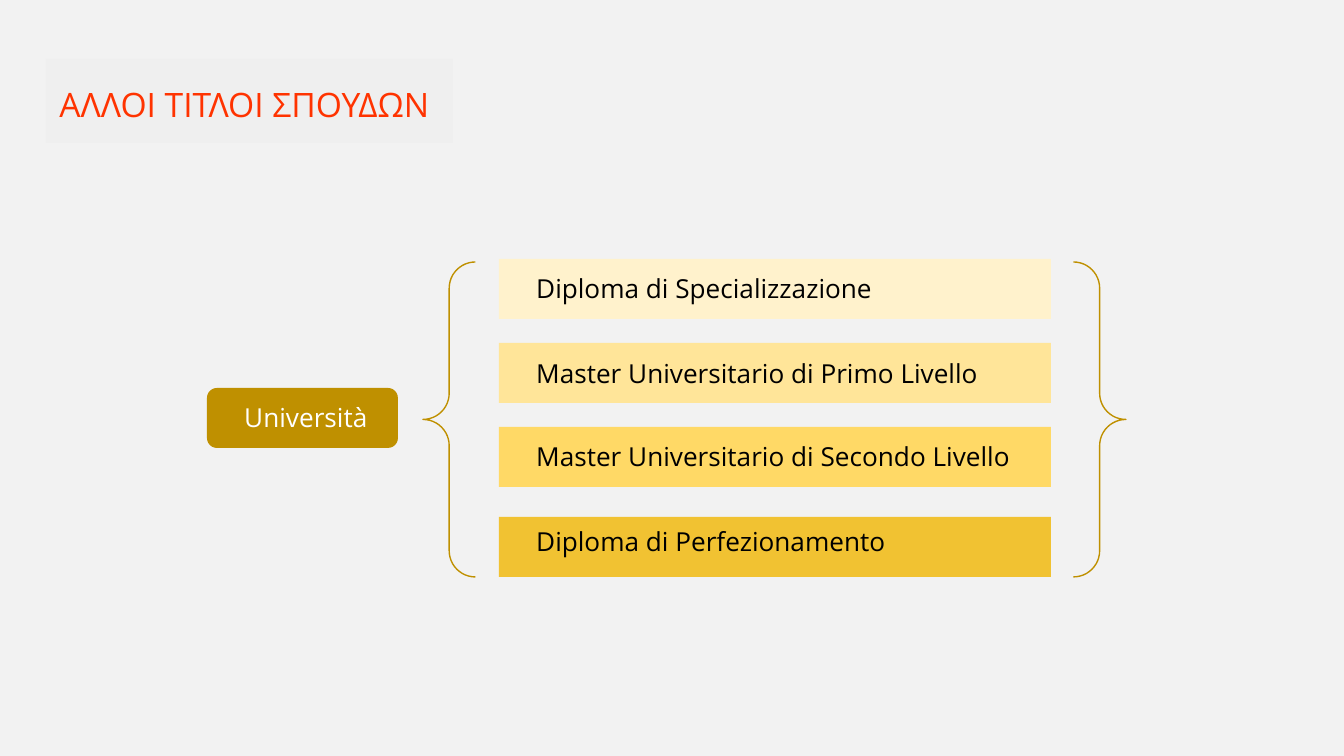
from dataclasses import dataclass
from typing import NamedTuple

from pptx import Presentation
from pptx import util as u
from pptx.dml.color import RGBColor
from pptx.enum import shapes, text

PX = 914400 / 134.4  # EMU per px
KIND = shapes.MSO_SHAPE


@dataclass(frozen=True)
class Theme:
    font: str = "Open Sans"
    head: int = 18
    body: int = 14
    back: str = "F2F2F2"
    panel: str = "EFEFEF"
    red: str = "FF3300"
    gold: str = "BF9000"
    white: str = "FFFFFF"
    black: str = "000000"


class Box(NamedTuple):
    x: int
    y: int
    w: int
    h: int

    def emu(self) -> list[int]:
        return [round(v * PX) for v in self]


class Level(NamedTuple):
    name: str
    fill: str
    top: int
    label: int  # top of the label


THEME = Theme()
LEVELS = [
    Level("Diploma di Specializzazione", "FFF2CC", 259, 259),
    Level("Master Universitario di Primo Livello", "FFE599", 343, 344),
    Level("Master Universitario di Secondo Livello", "FFD966", 427, 427),
    Level("Diploma di Perfezionamento", "F1C232", 517, 512),
]


def rgb(code: str) -> RGBColor:
    return RGBColor.from_string(code)


def block(slide, kind, box: Box, fill: str) -> None:
    """Draw a filled shape without outline."""
    shape = slide.shapes.add_shape(kind, *box.emu())
    shape.shadow.inherit = False
    shape.fill.solid()
    shape.fill.fore_color.rgb = rgb(fill)
    shape.line.fill.background()


def write(shape, words: str, size: int, color: str) -> None:
    """Put one left-aligned run at the top of a text shape."""
    frame = shape.text_frame
    frame.word_wrap = True
    frame.auto_size = text.MSO_AUTO_SIZE.NONE
    frame.vertical_anchor = text.MSO_ANCHOR.TOP
    frame.margin_left = frame.margin_right = u.Inches(0.1)
    frame.margin_top = frame.margin_bottom = u.Inches(0.1)
    para = frame.paragraphs[0]
    para.alignment = text.PP_ALIGN.LEFT
    run = para.add_run()
    run.text = words
    run.font.name = THEME.font
    run.font.size = u.Pt(size)
    run.font.color.rgb = rgb(color)


def label(slide, box: Box, words: str, color: str) -> None:
    write(slide.shapes.add_textbox(*box.emu()), words, THEME.body, color)


def brace(slide, box: Box) -> None:
    """Draw the pair of braces around the levels."""
    pair = slide.shapes.add_shape(KIND.DOUBLE_BRACE, *box.emu())
    pair.shadow.inherit = False
    pair.fill.background()
    pair.line.color.rgb = rgb(THEME.gold)
    pair.line.width = u.Pt(0.75)


def main() -> None:
    deck = Presentation()
    deck.slide_width, deck.slide_height = round(1344 * PX), round(756 * PX)
    slide = deck.slides.add_slide(deck.slide_layouts[5])
    slide.background.fill.solid()
    slide.background.fill.fore_color.rgb = rgb(THEME.back)

    # Title on its panel, which lies behind it
    block(slide, KIND.RECTANGLE, Box(46, 59, 407, 84), THEME.panel)
    title = slide.shapes.title
    title.left, title.top, title.width, title.height = Box(46, 70, 1253, 85).emu()
    write(title, "ΑΛΛΟΙ ΤΙΤΛΟΙ ΣΠΟΥΔΩΝ", THEME.head, THEME.red)
    slide.shapes._spTree.append(title._element)

    # University
    block(slide, KIND.ROUNDED_RECTANGLE, Box(207, 388, 191, 60), THEME.gold)
    label(slide, Box(231, 388, 317, 99), "Università", THEME.white)

    # Levels
    for level in LEVELS:
        block(slide, KIND.RECTANGLE, Box(499, level.top, 552, 60), level.fill)
    for level in LEVELS:
        label(slide, Box(523, level.label, 534, 99), level.name, THEME.black)

    brace(slide, Box(423, 262, 703, 315))
    deck.save("out.pptx")


if __name__ == "__main__":
    main()
